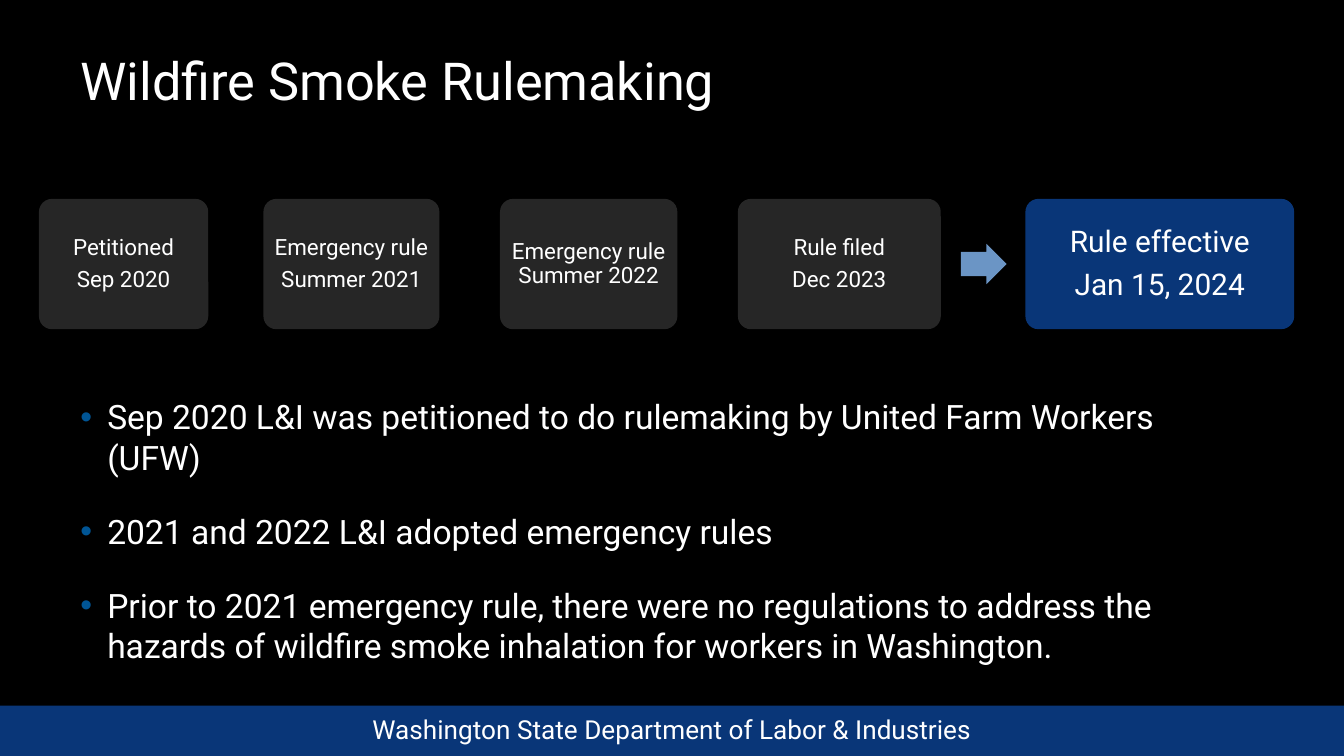
from lxml.etree import SubElement
from pptx import Presentation
from pptx.dml.color import RGBColor
from pptx.enum.shapes import MSO_SHAPE
from pptx.enum.text import MSO_ANCHOR, PP_ALIGN
from pptx.oxml.ns import qn
from pptx.util import Inches, Pt

# Content
TITLE = "Wildfire Smoke Rulemaking"
FOOTER = "Washington State Department of Labor & Industries"
BULLETS = [
    "Sep 2020 L&I was petitioned to do rulemaking by United Farm Workers (UFW)",
    "2021 and 2022 L&I adopted emergency rules",
    "Prior to 2021 emergency rule, there were no regulations to address the "
    "hazards of wildfire smoke inhalation for workers in Washington.",
]
# Milestones: lines, left, width, style
MILESTONES = [
    (["Petitioned", "Sep 2020"], 0.29, 1.26, "step"),
    (["Emergency rule", "Summer 2021"], 1.96, 1.31, "step"),
    (["Emergency rule Summer 2022"], 3.72, 1.32, "step"),
    (["Rule filed", "Dec 2023"], 5.49, 1.51, "step"),
    (["Rule effective", "Jan 15, 2024"], 7.63, 2.0, "final"),
]


class Theme:
    font = "Roboto"
    background = "000000"
    text = "FFFFFF"
    bullet = "005595"
    band = "093678"
    arrow = "6B95C5"
    card_fill = {"step": "262626", "final": "093678"}
    card_size = {"step": 12, "final": 16}
    card_margin = {"step": 0.04, "final": 0.07}
    title_size, body_size, footer_size = 28, 18, 14


SLIDE_WIDTH = 10
SLIDE_HEIGHT = SLIDE_WIDTH * 9 / 16
BAND_TOP = 5.25
CARD_TOP, CARD_HEIGHT = 1.48, 0.97
ARROW_LEFT, ARROW_WIDTH, ARROW_HEIGHT = 7.15, 0.34, 0.3


def add_filled(slide, kind, left, top, width, height, color):
    shape = slide.shapes.add_shape(
        kind, Inches(left), Inches(top), Inches(width), Inches(height))
    shape.shadow.inherit = False
    shape.fill.solid()
    shape.fill.fore_color.rgb = RGBColor.from_string(color)
    shape.line.fill.background()
    return shape


def write(shape, lines, size, align=PP_ALIGN.LEFT):
    text_frame = shape.text_frame
    text_frame.word_wrap = True
    text_frame.text = "\n".join(lines)
    for paragraph in text_frame.paragraphs:
        paragraph.alignment = align
        for run in paragraph.runs:
            run.font.name = Theme.font
            run.font.size = Pt(size)
            run.font.color.rgb = RGBColor.from_string(Theme.text)
    return text_frame


def add_text(slide, box, lines, size, align=PP_ALIGN.LEFT):
    shape = slide.shapes.add_textbox(*(Inches(value) for value in box))
    return write(shape, lines, size, align)


def add_bullet(paragraph):
    properties = paragraph._p.get_or_add_pPr()
    properties.set("marL", str(Inches(0.2)))
    properties.set("indent", str(-Inches(0.2)))
    color = SubElement(properties, qn("a:buClr"))
    SubElement(color, qn("a:srgbClr"), val=Theme.bullet)
    SubElement(properties, qn("a:buFont"), typeface="Arial")
    SubElement(properties, qn("a:buChar"), char="•")


def add_milestone(slide, lines, left, width, style):
    card = add_filled(slide, MSO_SHAPE.ROUNDED_RECTANGLE, left, CARD_TOP,
                      width, CARD_HEIGHT, Theme.card_fill[style])
    card.adjustments[0] = 0.1
    size = Theme.card_size[style]
    text_frame = write(card, lines, size, PP_ALIGN.CENTER)
    text_frame.vertical_anchor = MSO_ANCHOR.MIDDLE
    margin = Inches(Theme.card_margin[style])
    text_frame.margin_left = text_frame.margin_right = margin
    text_frame.margin_top = text_frame.margin_bottom = margin
    for paragraph in text_frame.paragraphs:
        paragraph.line_spacing = 0.9
        paragraph.space_after = Pt(size * 0.35)


def main():
    presentation = Presentation()
    presentation.slide_width = Inches(SLIDE_WIDTH)
    presentation.slide_height = Inches(SLIDE_HEIGHT)
    slide = presentation.slides.add_slide(presentation.slide_layouts[6])
    slide.background.fill.solid()
    slide.background.fill.fore_color.rgb = RGBColor.from_string(Theme.background)

    # Footer band
    add_filled(slide, MSO_SHAPE.RECTANGLE, 0, BAND_TOP, SLIDE_WIDTH,
               SLIDE_HEIGHT - BAND_TOP, Theme.band)
    add_text(slide, (0, 5.26, SLIDE_WIDTH, 0.34), [FOOTER],
             Theme.footer_size, PP_ALIGN.CENTER)

    # Title
    add_text(slide, (0.5, 0.31, 8.92, 0.47), [TITLE], Theme.title_size)

    # Bullets
    body = add_text(slide, (0.5, 2.9, 8.83, 1.83), BULLETS, Theme.body_size)
    for index, paragraph in enumerate(body.paragraphs):
        add_bullet(paragraph)
        paragraph.space_before = Pt(6 if index else 0)
        paragraph.space_after = Pt(12)

    # Timeline
    for milestone in MILESTONES:
        add_milestone(slide, *milestone)

    # Arrow to the final milestone, level with the middle of the cards
    arrow_top = CARD_TOP + (CARD_HEIGHT - ARROW_HEIGHT) / 2
    arrow = add_filled(slide, MSO_SHAPE.RIGHT_ARROW, ARROW_LEFT, arrow_top,
                       ARROW_WIDTH, ARROW_HEIGHT, Theme.arrow)
    arrow.adjustments[0] = 0.6
    arrow.adjustments[1] = 0.5

    presentation.save("out.pptx")


if __name__ == "__main__":
    main()
